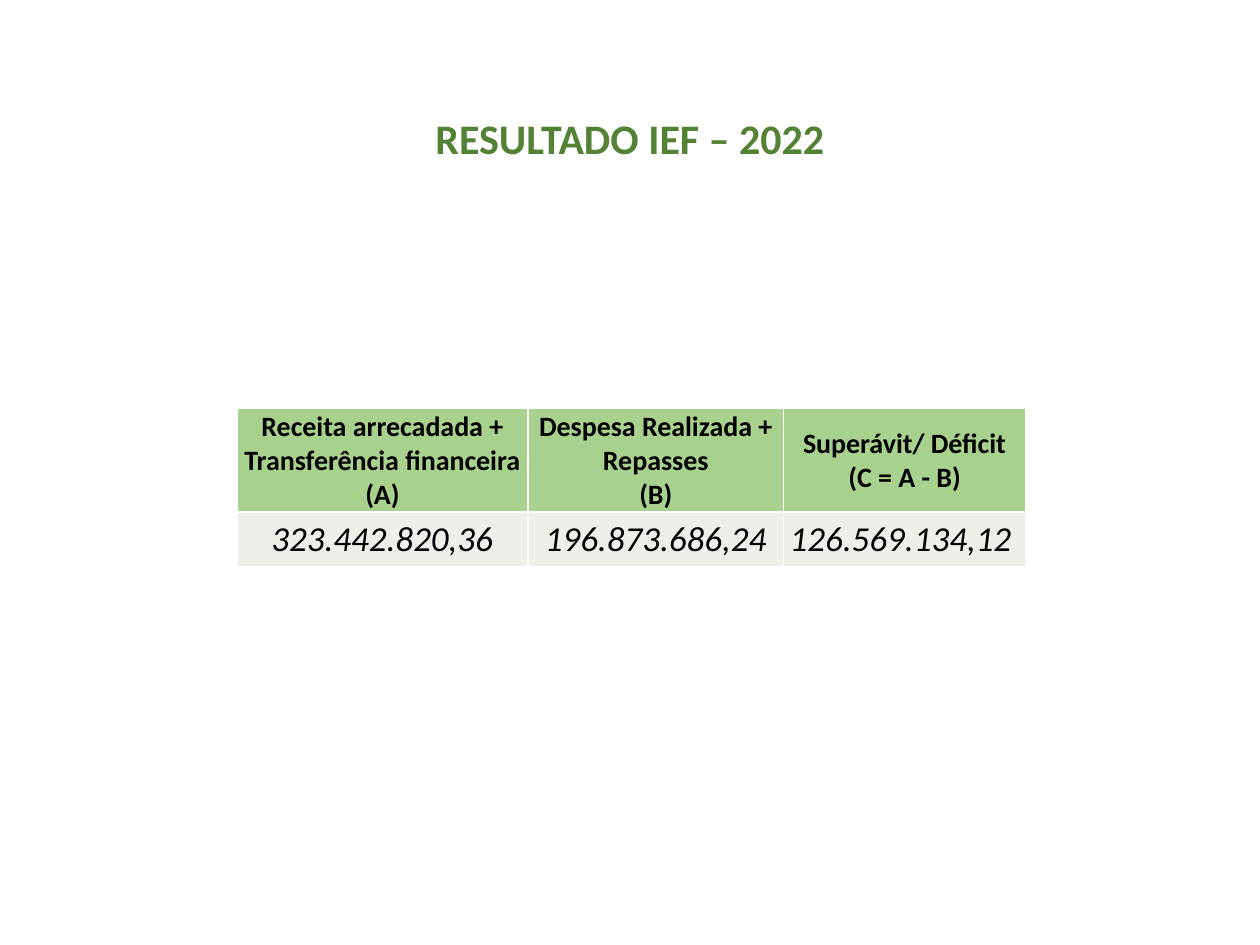
from lxml import etree
from pptx import Presentation
from pptx import util as u
from pptx.dml.color import RGBColor
from pptx.enum import text
from pptx.oxml.ns import qn

GREEN, PALE, DARK = "A9D18E", "EBF1E9", "548235"
BLACK, WHITE = "000000", "FFFFFF"
WIDTHS = [2.31, 2.03, 1.92]
HEIGHTS = [0.82, 0.43]
HEADS = [
    [["Receita arrecadada +", "Transferência financeira", "(A)"]],
    [["Despesa Realizada + Repasses"], ["(B)"]],
    [["Superávit/ Déficit", "(C = A - B)"]],
]
SUMS = [[["323.442.820,36"]], [["196.873.686,24"]], [["126.569.134,12 "]]]


def color(code):
    return RGBColor.from_string(code)


def write(frame, paras, size, code, bold=False, italic=False):
    for i, lines in enumerate(paras):
        para = frame.paragraphs[0] if i == 0 else frame.add_paragraph()
        para.alignment = text.PP_ALIGN.CENTER
        for j, line in enumerate(lines):
            if j:
                para.add_line_break()
            run = para.add_run()
            run.text = line
            font = run.font
            font.name, font.size = "Calibri", u.Pt(size)
            font.bold, font.italic = bold, italic
            font.color.rgb = color(code)


def border(cell, code):
    props = cell._tc.get_or_add_tcPr()
    for side in ("lnL", "lnR", "lnT", "lnB"):
        line = etree.SubElement(props, qn("a:" + side), w=str(u.Pt(1)))
        fill = etree.SubElement(line, qn("a:solidFill"))
        etree.SubElement(fill, qn("a:srgbClr"), val=code)


def add_title(slide):
    box = slide.shapes.add_textbox(
        u.Inches(0.5), u.Inches(0.72), u.Inches(9), u.Inches(0.79))
    frame = box.text_frame
    frame.word_wrap = True
    frame.vertical_anchor = text.MSO_ANCHOR.MIDDLE
    write(frame, [["RESULTADO IEF – 2022"]], 24, DARK, bold=True)
    frame.paragraphs[0].line_spacing = 0.9


def fill_cell(cell, paras, back, size, **style):
    border(cell, WHITE)
    cell.fill.solid()
    cell.fill.fore_color.rgb = color(back)
    cell.vertical_anchor = text.MSO_ANCHOR.MIDDLE
    cell.margin_left = cell.margin_right = cell.margin_top = u.Inches(0.01)
    cell.margin_bottom = 0
    write(cell.text_frame, paras, size, BLACK, **style)


def add_result(slide):
    table = slide.shapes.add_table(
        2, 3, u.Inches(1.88), u.Inches(3.24),
        u.Inches(sum(WIDTHS)), u.Inches(sum(HEIGHTS))).table
    for col, width in zip(table.columns, WIDTHS):
        col.width = u.Inches(width)
    for row, height in zip(table.rows, HEIGHTS):
        row.height = u.Inches(height)
    for i, (head, total) in enumerate(zip(HEADS, SUMS)):
        fill_cell(table.cell(0, i), head, GREEN, 16, bold=True)
        fill_cell(table.cell(1, i), total, PALE, 20, italic=True)


def main():
    deck = Presentation()
    deck.slide_width, deck.slide_height = u.Inches(10), u.Inches(7.5)
    slide = deck.slides.add_slide(deck.slide_layouts[6])
    add_result(slide)
    add_title(slide)
    deck.save("out.pptx")


if __name__ == "__main__":
    main()
